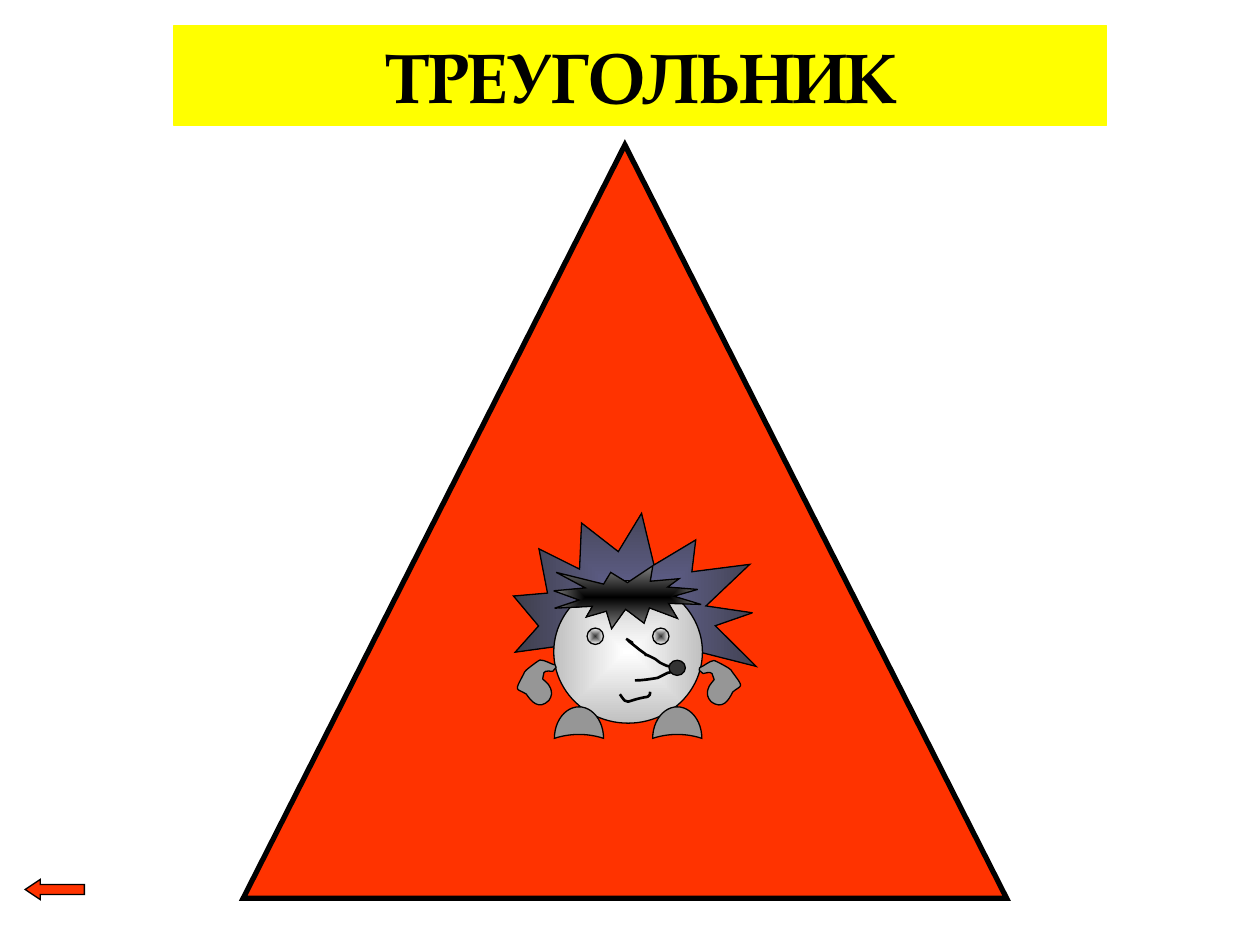
import math

from lxml import etree
from pptx import Presentation, util as u
from pptx.dml.color import RGBColor
from pptx.enum import shapes, text
from pptx.oxml import parse_xml
from pptx.oxml.ns import nsdecls, qn

COLORS = {
    "red": "FF3300", "yellow": "FFFF00", "black": "000000", "white": "FFFFFF",
    "violet": "666699", "charcoal": "333333", "silver": "C0C0C0",
    "gray": "969696", "mid_gray": "808080",
}
FONT = "TeX Gyre Pagella"
COLUMNS, ROWS = 100, 75
SHAPE = shapes.MSO_SHAPE

# Outlines: a start point, then cubic curves of two handles and an end point
NOSE = [(49.7, 50.7),
        (51.1, 51.6), (49, 50.2), (50.3, 51.2), (50.4, 51.4), (50.7, 51.4), (50.8, 51.6),
        (52.1, 52.5), (50.4, 51.5), (51.8, 52.2), (52.1, 52.3), (52.3, 52.6), (52.6, 52.7),
        (52.8, 52.8), (53, 52.9), (53.2, 52.9), (53.6, 53), (54.3, 53.1), (54.3, 53.1),
        (53.6, 53.6), (54.4, 53.1), (53, 53.4), (52.7, 53.5), (52.5, 53.7), (52.2, 53.8),
        (51.6, 53.9), (51, 54), (50.4, 54)]
SMILE = [(49.2, 55.1),
         (49.9, 56.1), (49.5, 55.6), (51.4, 55.3), (51.6, 55.2), (51.6, 55.1), (51.6, 54.9)]
PAW = [(44.1, 52.8),
       (43.7, 52.7), (43.3, 52.4), (42.9, 52.4), (42.8, 52.4), (41.9, 53.1), (41.8, 53.2),
       (41.7, 53.3), (41.6, 53.4), (41.6, 53.5), (40.8, 55), (41, 54.6), (41.8, 55.1),
       (42.2, 55.7), (42.8, 56.4), (43.6, 55.6), (43.7, 55.4), (43.8, 55.3), (43.8, 55.1),
       (43.8, 54.4), (43.4, 54.2), (43.1, 53.9), (43.1, 53.7), (43.1, 53.6), (43.2, 53.4),
       (43.3, 53.2), (43.8, 53.3), (43.9, 53.3), (44.2, 52.9), (44.2, 53.1), (44.1, 52.8)]
PAW_CENTER, PAW_TILT, RIGHT_PAW_TILT = (42.7, 54.3), 26.9, -35.5
BODY_CENTER = 49.9


def turn(points, center, degrees):
    """Turn points clockwise about a center."""
    cos, sin = math.cos(math.radians(degrees)), math.sin(math.radians(degrees))
    cx, cy = center
    return [(cx + (x - cx) * cos - (y - cy) * sin, cy + (x - cx) * sin + (y - cy) * cos)
            for x, y in points]


class Board:
    """Draws on one slide, with lengths in columns and rows of its grid."""

    def __init__(self, deck):
        self.column = deck.slide_width / COLUMNS
        self.row = deck.slide_height / ROWS
        self.slide = deck.slides.add_slide(deck.slide_layouts[5])
        self.canvas = self.slide.shapes

    def start_group(self):
        self.canvas = self.slide.shapes.add_group_shape().shapes

    def emu(self, x, y):
        return round(x * self.column), round(y * self.row)

    def paint(self, shape, fill, line="black", width=0.75):
        """Fill with one colour, a pair from centre to edge, or nothing."""
        if fill is None:
            shape.fill.background()
        elif isinstance(fill, tuple):
            shape.fill.gradient()
            for stop, name in zip(shape.fill.gradient_stops, fill):
                stop.color.rgb = RGBColor.from_string(COLORS[name])
            linear = shape._element.spPr.find(".//" + qn("a:lin"))
            linear.getparent().replace(linear, parse_xml(
                f'<a:path {nsdecls("a")} path="shape">'
                '<a:fillToRect l="50000" t="50000" r="50000" b="50000"/></a:path>'))
        else:
            shape.fill.solid()
            shape.fill.fore_color.rgb = RGBColor.from_string(COLORS[fill])
        shape.line.color.rgb = RGBColor.from_string(COLORS[line])
        shape.line.width = u.Pt(width)

    def title(self, wording, x, y, w, h):
        banner = self.slide.shapes.title
        banner.left, banner.top = self.emu(x, y)
        banner.width, banner.height = self.emu(w, h)
        self.paint(banner, "yellow", line="yellow")
        frame = banner.text_frame
        frame.text = wording
        frame.word_wrap = False
        frame.auto_size = text.MSO_AUTO_SIZE.NONE
        frame.vertical_anchor = text.MSO_ANCHOR.MIDDLE
        heading = frame.paragraphs[0]
        heading.alignment = text.PP_ALIGN.CENTER
        heading.font.name, heading.font.size, heading.font.bold = FONT, u.Pt(40), True
        heading.font.color.rgb = RGBColor.from_string(COLORS["black"])

    def preset(self, kind, x, y, w, h, fill, width=0.75, rotation=0, adjust=()):
        shape = self.canvas.add_shape(kind, *self.emu(x, y), *self.emu(w, h))
        shape.shadow.inherit = False
        shape.rotation = rotation
        for i, value in enumerate(adjust):
            shape.adjustments[i] = value
        self.paint(shape, fill, width=width)
        border = shape._element.spPr.find(qn("a:ln"))
        etree.SubElement(border, qn("a:miter"), lim="800000")

    def curve(self, points, fill=None, width=0.75, closed=False, rotation=0):
        start, *rest = [self.emu(*point) for point in points]
        builder = self.canvas.build_freeform(*start, scale=1.0)
        builder.add_line_segments(rest, close=closed)
        shape = builder.convert_to_shape()
        segments = shape._element.spPr.findall(".//" + qn("a:lnTo"))
        for i in range(0, len(rest), 3):
            bezier = etree.Element(qn("a:cubicBezTo"))
            segments[i].addprevious(bezier)
            for segment in segments[i:i + 3]:
                bezier.append(segment[0])
                segment.getparent().remove(segment)
        shape.shadow.inherit = False
        shape.rotation = rotation
        self.paint(shape, fill, width=width)


def draw_hedgehog(board):
    board.start_group()
    board.preset(SHAPE.EXPLOSION2, 41.35, 39.9, 18.9, 17.9, ("violet", "charcoal"), rotation=43.7)
    board.preset(SHAPE.OVAL, 43.95, 46.1, 11.8, 11.3, ("white", "silver"))
    for foot_x in (52.5, 44.7):
        board.preset(SHAPE.MOON, foot_x, 55.4, 2.5, 3.9, "gray", rotation=90, adjust=[0.875])
    board.preset(SHAPE.OVAL, 51.8, 49.85, 1.3, 1.3, ("charcoal", "white"))
    board.curve(NOSE, width=1.5)
    board.preset(SHAPE.OVAL, 53.1, 52.4, 1.3, 1.2, "charcoal")
    board.curve(SMILE, width=1.5)
    board.preset(SHAPE.OVAL, 46.6, 49.85, 1.3, 1.3, ("charcoal", "white"))
    upright_paw = turn(PAW, PAW_CENTER, -PAW_TILT)
    mirrored_paw = [(2 * BODY_CENTER - x, y) for x, y in upright_paw]
    board.curve(upright_paw, "gray", closed=True, rotation=PAW_TILT)
    board.curve(mirrored_paw, "gray", closed=True, rotation=RIGHT_PAW_TILT)
    board.preset(SHAPE.EXPLOSION1, 43.95, 44.9, 11.7, 5, ("black", "mid_gray"))


def main():
    deck = Presentation()
    deck.slide_width, deck.slide_height = u.Inches(10), u.Inches(7.5)
    board = Board(deck)
    board.title("ТРЕУГОЛЬНИК", 13.8, 2.05, 74, 7.9)
    board.preset(SHAPE.ISOSCELES_TRIANGLE, 19.3, 11.5, 60.6, 59.8, "red", width=3)
    board.preset(SHAPE.LEFT_ARROW, 2, 69.8, 4.7, 1.6, "red", adjust=[0.5, 0.75])
    draw_hedgehog(board)
    deck.save("out.pptx")


if __name__ == "__main__":
    main()
